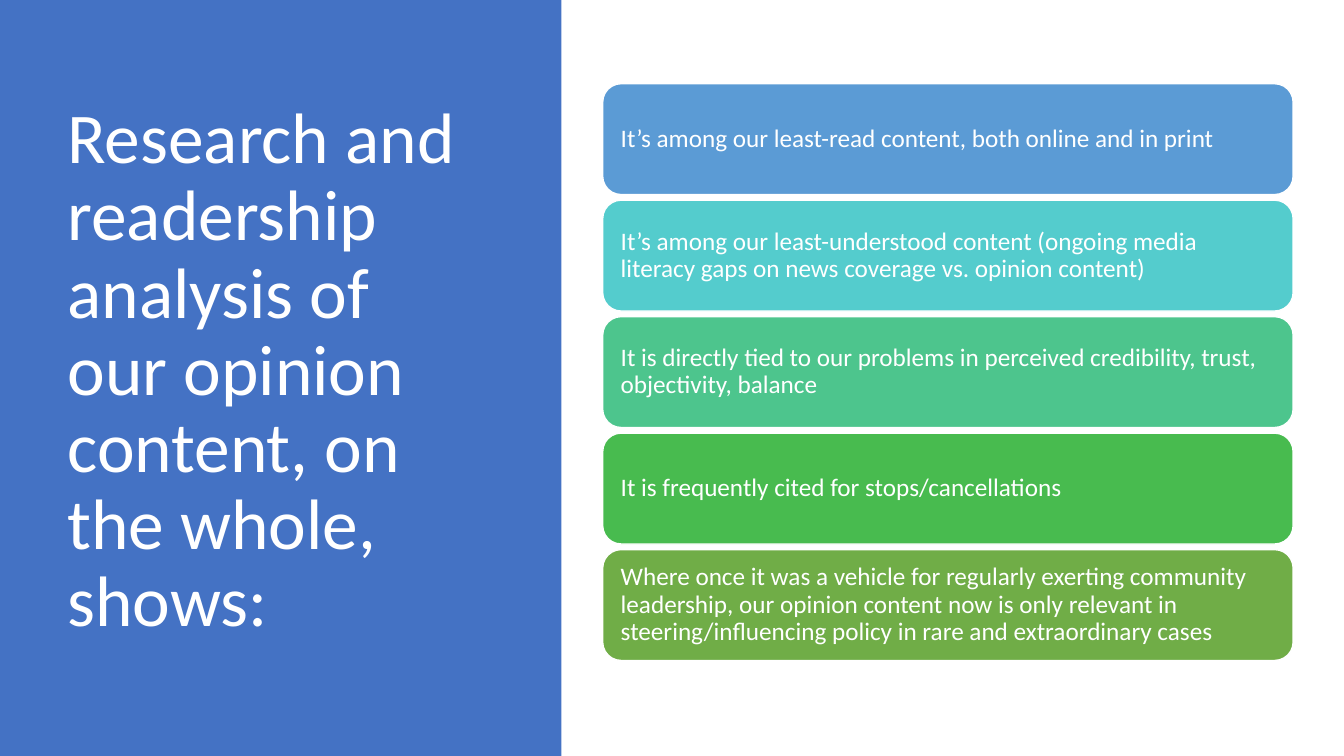
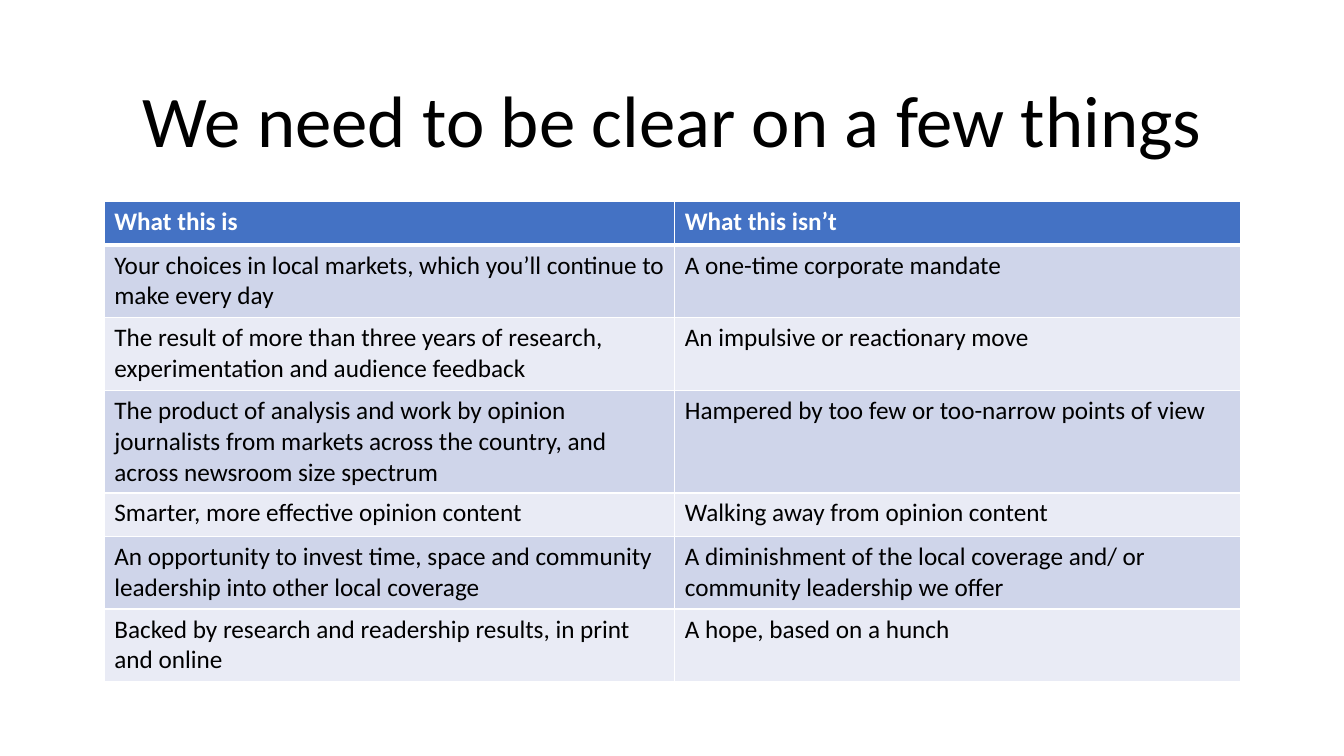
from lxml import etree
from pptx import Presentation
from pptx.dml.color import RGBColor
from pptx.enum.shapes import MSO_SHAPE
from pptx.enum.text import MSO_ANCHOR, MSO_AUTO_SIZE, PP_ALIGN
from pptx.oxml.ns import qn
from pptx.util import Pt

RECTANGLE, ROUNDED = MSO_SHAPE.RECTANGLE, MSO_SHAPE.ROUNDED_RECTANGLE
LEFT, CENTER = PP_ALIGN.LEFT, PP_ALIGN.CENTER
MIDDLE = MSO_ANCHOR.MIDDLE
NO_AUTOFIT = MSO_AUTO_SIZE.NONE

WHITE = RGBColor(0xFF, 0xFF, 0xFF)
BLACK = RGBColor(0x00, 0x00, 0x00)
BLUE = RGBColor(0x44, 0x72, 0xC4)
BAND_DARK = RGBColor(0xCF, 0xD5, 0xEA)
BAND_LIGHT = RGBColor(0xE9, 0xEB, 0xF5)

FONT = "Calibri"
BODY_SIZE = 18
SLIDE_WIDTH, SLIDE_HEIGHT = 960, 540
TITLE_ONLY_LAYOUT = 5

BOX_TOP, BOX_HEIGHT, BOX_PITCH = 59.8, 79.2, 83.2
FINDINGS = [
    ("It’s among our least-read content, both online and in print",
     RGBColor(0x5B, 0x9B, 0xD5)),
    ("It’s among our least-understood content (ongoing media literacy gaps "
     "on news coverage vs. opinion content)", RGBColor(0x54, 0xCC, 0xCD)),
    ("It is directly tied to our problems in perceived credibility, trust, "
     "objectivity, balance", RGBColor(0x4D, 0xC5, 0x8D)),
    ("It is frequently cited for stops/cancellations",
     RGBColor(0x48, 0xBB, 0x4F)),
    ("Where once it was a vehicle for regularly exerting community "
     "leadership, our opinion content now is only relevant in "
     "steering/influencing policy in rare and extraordinary cases",
     RGBColor(0x70, 0xAD, 0x47)),
]

COLUMN_WIDTHS = [407.5, 404]
ROW_HEIGHTS = [31, 52, 52, 73, 31, 52, 52]
COMPARISON = [
    ("What this is", "What this isn’t"),
    ("Your choices in local markets, which you’ll continue to make every day",
     "A one-time corporate mandate"),
    ("The result of more than three years of research, experimentation and "
     "audience feedback", "An impulsive or reactionary move"),
    ("The product of analysis and work by opinion journalists from markets "
     "across the country, and across newsroom size spectrum",
     "Hampered by too few or too-narrow points of view"),
    ("Smarter, more effective opinion content",
     "Walking away from opinion content"),
    ("An opportunity to invest time, space and community leadership into "
     "other local coverage",
     "A diminishment of the local coverage and/ or community leadership we offer"),
    ("Backed by research and readership results, in print and online",
     "A hope, based on a hunch"),
]


def write_text(text_frame, text, size, color, bold=False, align=LEFT,
               line_spacing=None):
    paragraph = text_frame.paragraphs[0]
    paragraph.alignment = align
    if line_spacing:
        paragraph.line_spacing = line_spacing
    run = paragraph.add_run()
    run.text = text
    run.font.name = FONT
    run.font.size = Pt(size)
    run.font.bold = bold
    run.font.color.rgb = color


def add_titled_slide(presentation, text, bounds, size, color, align):
    layout = presentation.slide_layouts[TITLE_ONLY_LAYOUT]
    slide = presentation.slides.add_slide(layout)
    title = slide.shapes.title
    title.left, title.top, title.width, title.height = map(Pt, bounds)
    frame = title.text_frame
    frame.word_wrap = True
    frame.auto_size = NO_AUTOFIT
    frame.vertical_anchor = MIDDLE
    write_text(frame, text, size, color, align=align, line_spacing=0.9)
    return slide


def add_filled_shape(slide, kind, bounds, fill):
    shape = slide.shapes.add_shape(kind, *map(Pt, bounds))
    shape.shadow.inherit = False
    shape.fill.solid()
    shape.fill.fore_color.rgb = fill
    shape.line.fill.background()
    return shape


def add_finding_box(slide, top, text, fill):
    box = add_filled_shape(slide, ROUNDED, (430.5, top, 493.2, BOX_HEIGHT), fill)
    box.line.color.rgb = WHITE
    box.line.width = Pt(1)
    frame = box.text_frame
    frame.word_wrap = True
    frame.vertical_anchor = MIDDLE
    frame.margin_left = frame.margin_right = Pt(9)
    write_text(frame, text, BODY_SIZE, WHITE, line_spacing=0.9)


def set_cell_borders(cell, top, bottom):
    """Draw white borders, 1 pt at the sides and as given above and below."""
    properties = cell._tc.get_or_add_tcPr()
    widths = {"a:lnL": 1, "a:lnR": 1, "a:lnT": top, "a:lnB": bottom}
    for position, (tag, width) in enumerate(widths.items()):
        line = etree.Element(qn(tag), w=str(Pt(width)))
        fill = etree.SubElement(line, qn("a:solidFill"))
        etree.SubElement(fill, qn("a:srgbClr"), val=str(WHITE))
        properties.insert(position, line)


def add_comparison_table(slide, rows):
    frame = slide.shapes.add_table(
        len(rows), len(COLUMN_WIDTHS), Pt(74.5), Pt(144),
        Pt(sum(COLUMN_WIDTHS)), Pt(sum(ROW_HEIGHTS)))
    table = frame.table
    for column, width in zip(table.columns, COLUMN_WIDTHS):
        column.width = Pt(width)
    for row_index, texts in enumerate(rows):
        table.rows[row_index].height = Pt(ROW_HEIGHTS[row_index])
        header = row_index == 0
        band = BAND_DARK if row_index % 2 else BAND_LIGHT
        for column_index, text in enumerate(texts):
            cell = table.cell(row_index, column_index)
            cell.fill.solid()
            cell.fill.fore_color.rgb = BLUE if header else band
            set_cell_borders(cell, top=3 if row_index == 1 else 1,
                             bottom=3 if header else 1)
            write_text(cell.text_frame, text, BODY_SIZE,
                       WHITE if header else BLACK, bold=header)


def build_findings_slide(presentation):
    slide = add_titled_slide(
        presentation,
        "Research and readership analysis of our opinion content, "
        "on the whole, shows:",
        (41, 49, 299.5, 433.5), 51, WHITE, LEFT)
    panel = add_filled_shape(slide, RECTANGLE, (0, 0, 401, SLIDE_HEIGHT), BLUE)
    slide.shapes.title.element.addprevious(panel.element)
    for index, (text, fill) in enumerate(FINDINGS):
        add_finding_box(slide, BOX_TOP + index * BOX_PITCH, text, fill)


def build_comparison_slide(presentation):
    slide = add_titled_slide(
        presentation, "We need to be clear on a few things",
        (66, 44, 828, 89), 52, BLACK, CENTER)
    add_comparison_table(slide, COMPARISON)


def main():
    presentation = Presentation()
    presentation.slide_width = Pt(SLIDE_WIDTH)
    presentation.slide_height = Pt(SLIDE_HEIGHT)
    build_findings_slide(presentation)
    build_comparison_slide(presentation)
    presentation.save("out.pptx")


if __name__ == "__main__":
    main()
